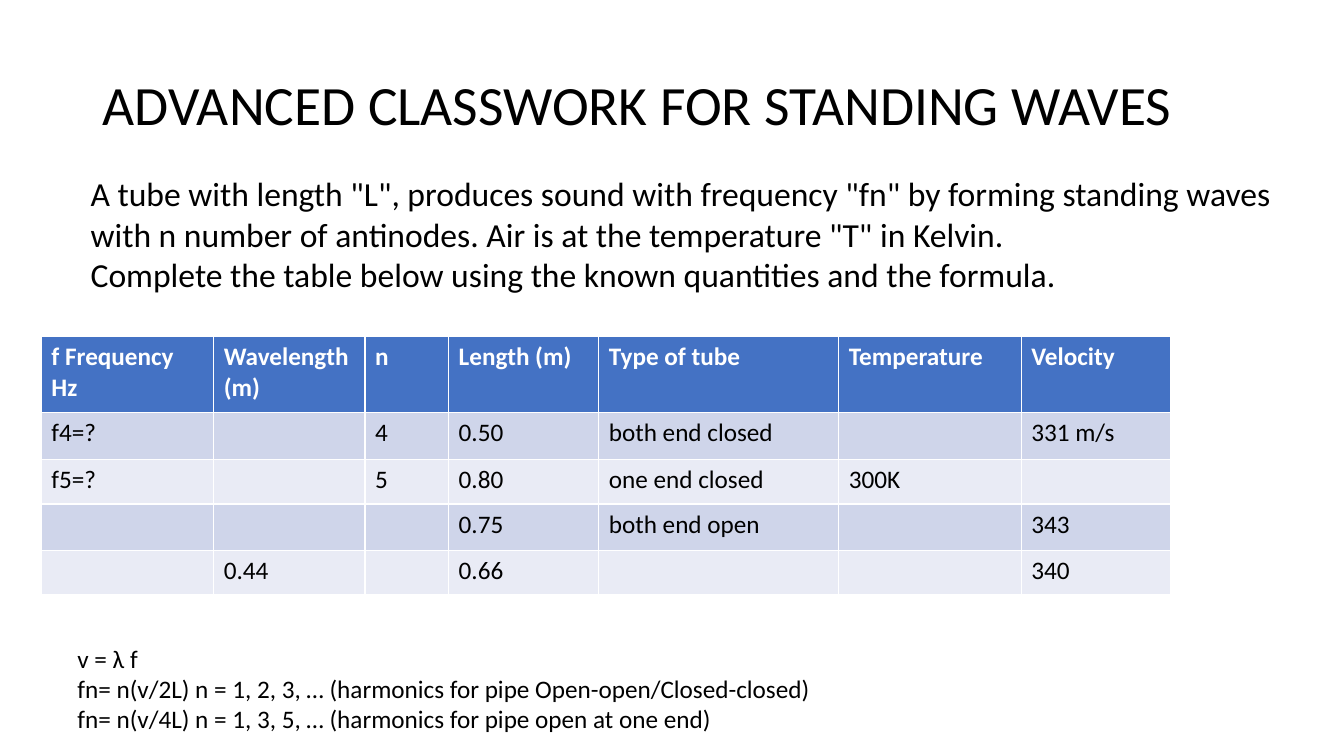
from dataclasses import dataclass

from pptx import Presentation
from pptx import util as u
from pptx.dml.color import RGBColor
from pptx.enum import text


@dataclass(frozen=True)
class Theme:
    font: str = "Calibri"
    ink: str = "000000"
    light: str = "FFFFFF"
    head: str = "4472C4"
    bands: tuple = ("CFD5EA", "E9EBF5")
    title: float = 39.6
    body: float = 24
    small: float = 18


THEME = Theme()

TITLE = "ADVANCED CLASSWORK FOR STANDING WAVES"
TASK = (
    'A tube with length "L", produces sound with frequency "fn" by forming '
    'standing waves with n number of antinodes. Air is at the temperature "T" in Kelvin.\n'
    "Complete the table below using the known quantities and the formula."
)
RULES = (
    "v = λ f\n"
    "fn= n(v/2L) n = 1, 2, 3, … (harmonics for pipe Open-open/Closed-closed)\n"
    "fn= n(v/4L) n = 1, 3, 5, … (harmonics for pipe open at one end)"
)
COLS = (1.71, 1.5, 0.83, 1.49, 2.38, 1.81, 1.48)
ROWS = (0.75, 0.47, 0.44, 0.46, 0.44)
CELLS = (
    ("f Frequency\nHz", "Wavelength\n(m)", "n", "Length (m)", "Type of tube",
     "Temperature", "Velocity"),
    ("f4=?", "", "4", "0.50", "both end closed", "", "331 m/s"),
    ("f5=?", "", "5", "0.80", "one end closed", "300K", ""),
    ("", "", "", "0.75", "both end open", "", "343"),
    ("", "0.44", "", "0.66", "", "", "340"),
)


def style(frame, size, color, bold=False):
    for para in frame.paragraphs:
        for run in para.runs:
            run.font.name = THEME.font
            run.font.size = u.Pt(size)
            run.font.bold = bold
            run.font.color.rgb = RGBColor.from_string(color)


def add_text(slide, box, words, size):
    frame = slide.shapes.add_textbox(*map(u.Inches, box)).text_frame
    frame.word_wrap = True
    frame.text = words
    style(frame, size, THEME.ink)
    return frame


def add_title(slide, box):
    frame = add_text(slide, box, TITLE, THEME.title)
    frame.vertical_anchor = text.MSO_ANCHOR.MIDDLE
    frame.paragraphs[0].line_spacing = 0.9


def add_grid(slide, box):
    """Table of tubes: one header row, then rows in alternating bands."""
    grid = slide.shapes.add_table(len(ROWS), len(COLS), *map(u.Inches, box)).table
    for col, width in zip(grid.columns, COLS):
        col.width = u.Inches(width)
    for i, (row, height) in enumerate(zip(grid.rows, ROWS)):
        row.height = u.Inches(height)
        head = i == 0
        fill = THEME.head if head else THEME.bands[(i - 1) % 2]
        for cell, words in zip(row.cells, CELLS[i]):
            cell.text = words
            cell.fill.solid()
            cell.fill.fore_color.rgb = RGBColor.from_string(fill)
            style(cell.text_frame, THEME.small, THEME.light if head else THEME.ink, head)


def main():
    deck = Presentation()
    deck.slide_width, deck.slide_height = u.Inches(13.33), u.Inches(7.5)
    slide = deck.slides.add_slide(deck.slide_layouts[6])
    add_title(slide, (0.92, 0.4, 11.5, 1.33))
    add_text(slide, (0.8, 1.67, 11.95, 1.31), TASK, THEME.body)
    add_grid(slide, (0.41, 3.34, sum(COLS), sum(ROWS)))
    add_text(slide, (0.67, 6.33, 9.66, 1.01), RULES, THEME.small)
    deck.save("out.pptx")


if __name__ == "__main__":
    main()
